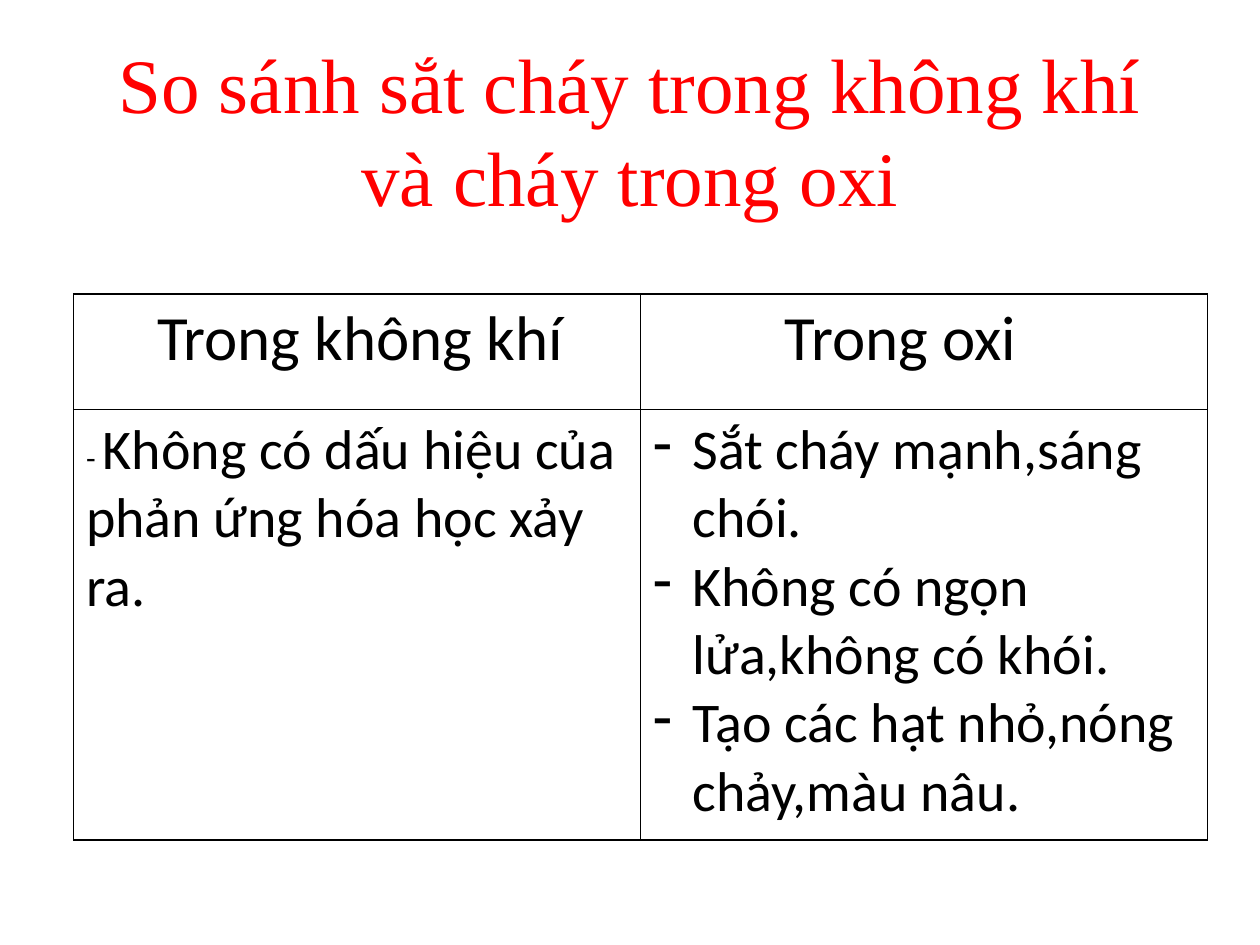
"""Builds a slide comparing how iron burns in air and in oxygen."""
from dataclasses import dataclass

from lxml.etree import SubElement
from pptx import Presentation
from pptx.dml.color import RGBColor
from pptx.enum.text import MSO_ANCHOR, PP_ALIGN
from pptx.oxml.ns import qn
from pptx.util import Pt


@dataclass(frozen=True)
class Theme:
    """Colours, fonts and type sizes of the slide."""
    paper: RGBColor = RGBColor(255, 255, 255)
    accent: RGBColor = RGBColor(255, 0, 0)
    ink: RGBColor = RGBColor(0, 0, 0)
    title_face: str = "Times New Roman"
    body_face: str = "Calibri"
    title_size: int = 44
    heading_size: int = 36
    body_size: int = 32
    dash_size: int = 18
    rule_width: int = 1


THEME = Theme()


def style(paragraph, face, size, color):
    """Set the font of a whole paragraph."""
    paragraph.font.name = face
    paragraph.font.size = Pt(size)
    paragraph.font.color.rgb = color


def indent(paragraph, margin, first=0):
    """Set the left margin and first-line indent of a paragraph."""
    properties = paragraph._p.get_or_add_pPr()
    properties.set("marL", str(Pt(margin)))
    properties.set("indent", str(Pt(first)))
    return properties


def add_title(slide, wording):
    """Add the centred title on its white panel."""
    title = slide.shapes.add_textbox(Pt(36), Pt(21.6), Pt(648), Pt(104.4))
    title.fill.solid()
    title.fill.fore_color.rgb = THEME.paper
    frame = title.text_frame
    frame.word_wrap = True
    frame.vertical_anchor = MSO_ANCHOR.MIDDLE
    heading = frame.paragraphs[0]
    heading.text = wording
    heading.alignment = PP_ALIGN.CENTER
    style(heading, THEME.title_face, THEME.title_size, THEME.accent)


def rule_cell(cell):
    """Clear the fill of a cell and draw its four borders."""
    properties = cell._tc.get_or_add_tcPr()
    for side in ("lnL", "lnR", "lnT", "lnB"):
        border = SubElement(properties, qn(f"a:{side}"), w=str(Pt(THEME.rule_width)))
        fill = SubElement(border, qn("a:solidFill"))
        SubElement(fill, qn("a:srgbClr"), val=str(THEME.ink))
    cell.fill.background()


def add_comparison(slide):
    """Add the ruled two-by-two table and return it."""
    frame = slide.shapes.add_table(2, 2, Pt(42), Pt(168), Pt(648), Pt(312))
    table = frame.table
    table.first_row = table.horz_banding = False
    for row, height in zip(table.rows, (66, 246)):
        row.height = Pt(height)
    for cell in table.iter_cells():
        rule_cell(cell)
    return table


def fill_heading(cell, wording, margin):
    """Write a column heading, set in from the left."""
    heading = cell.text_frame.paragraphs[0]
    heading.text = wording
    style(heading, THEME.body_face, THEME.heading_size, THEME.ink)
    indent(heading, margin)


def fill_remark(cell, wording):
    """Write one remark led by a small dash."""
    remark = cell.text_frame.paragraphs[0]
    style(remark, THEME.body_face, THEME.body_size, THEME.ink)
    dash = remark.add_run()
    dash.text = "- "
    dash.font.size = Pt(THEME.dash_size)
    remark.add_run().text = wording


def fill_list(cell, remarks):
    """Write remarks as a dashed list."""
    cell.text = "\n".join(remarks)
    for remark in cell.text_frame.paragraphs:
        properties = indent(remark, 22.5, -22.5)
        SubElement(properties, qn("a:buChar"), char="-")
        style(remark, THEME.body_face, THEME.body_size, THEME.ink)


def main():
    """Build and save the slide."""
    deck = Presentation()
    deck.slide_width, deck.slide_height = Pt(720), Pt(540)
    slide = deck.slides.add_slide(deck.slide_layouts[6])
    add_title(slide, "So sánh sắt cháy trong không khí và cháy trong oxi")
    table = add_comparison(slide)
    fill_heading(table.cell(0, 0), "Trong không khí", 40.5)
    fill_heading(table.cell(0, 1), "Trong oxi", 75)
    fill_remark(table.cell(1, 0), "Không có dấu hiệu của phản ứng hóa học xảy ra.")
    fill_list(table.cell(1, 1), (
        "Sắt cháy mạnh,sáng chói.",
        "Không có ngọn lửa,không có khói.",
        "Tạo các hạt nhỏ,nóng chảy,màu nâu.",
    ))
    deck.save("out.pptx")


if __name__ == "__main__":
    main()
